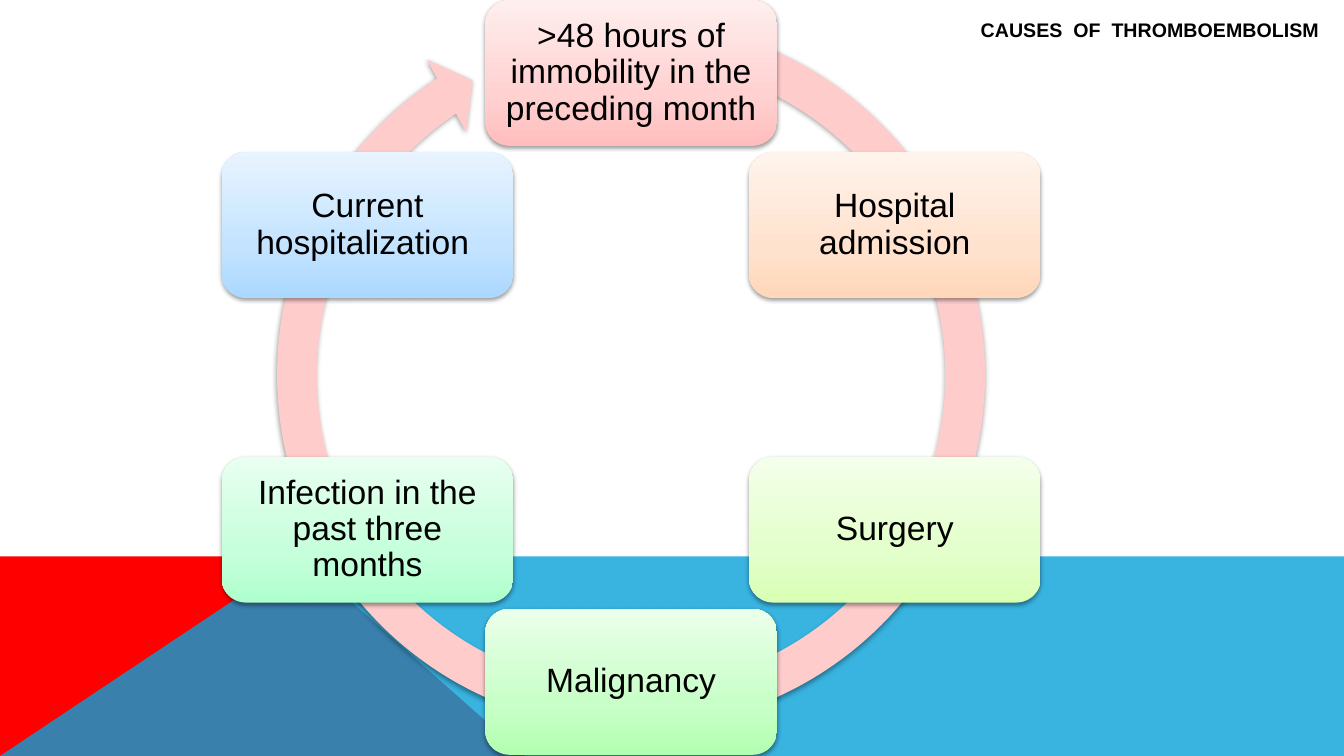
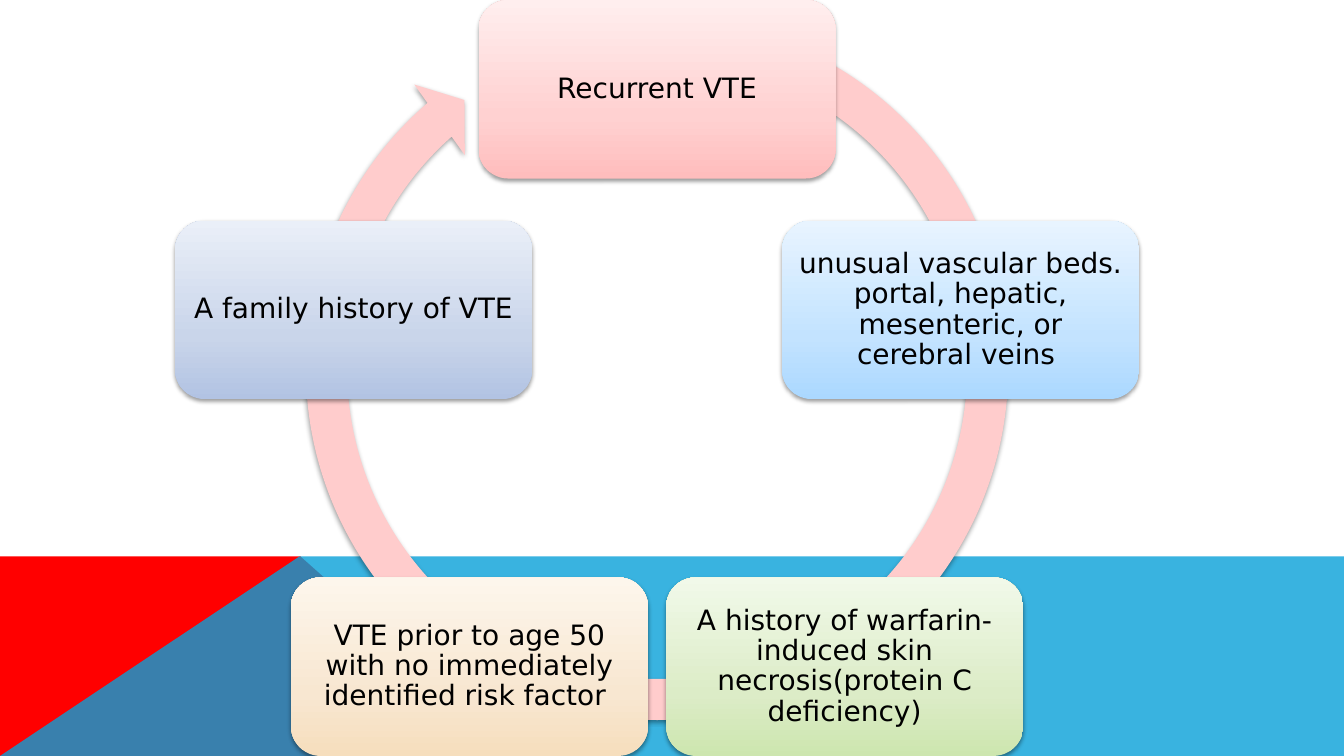
"""Builds two cycle slides on the causes and recurrence of thromboembolism."""
from copy import deepcopy
from math import cos, pi, sin

from lxml.etree import SubElement
from pptx import Presentation
from pptx.dml.color import RGBColor
from pptx.enum.shapes import MSO_SHAPE
from pptx.enum.text import MSO_ANCHOR, PP_ALIGN
from pptx.oxml.ns import qn
from pptx.util import Cm, Pt

SLIDE_W, SLIDE_H = 33.87, 19.05
BAND_TOP = 14.02

BLACK = RGBColor(0x00, 0x00, 0x00)
RED = RGBColor(0xFF, 0x00, 0x00)
BLUE = RGBColor(0x08, 0xA1, 0xD9)
PINK = RGBColor(0xFF, 0xCC, 0xCC)


def shades(*codes):
    """Return the bottom, middle and top colours of a card."""
    return [RGBColor.from_string(code) for code in codes]


ROSE = shades("FFBDBD", "FFD1D1", "FFEEEE")
PEACH = shades("FFD7B9", "FFE2CE", "FFF4EC")
LIME = shades("D9FFB5", "E3FFCB", "F4FFEB")
GREEN = shades("B2FFB1", "C8FFC8", "EAFFEA")
MINT = shades("AEFFCD", "C6FFDB", "E9FFF1")
SKY = shades("ABD8FF", "C3E3FF", "E8F4FF")
MOSS = shades("CDE6AF", "DCECC7", "F1F9E9")
SAND = shades("F6DEBD", "F8E7D1", "FDF6EC")
SLATE = shades("B2C3E3", "C9D5EA", "EAEFF8")

RISKS = [
    (">48 hours of immobility in the preceding month", ROSE),
    ("Hospital admission", PEACH),
    ("Surgery", LIME),
    ("Malignancy", GREEN),
    ("Infection in the past three months", MINT),
    ("Current hospitalization ", SKY),
]
RECURRENCE = [
    ("Recurrent VTE", ROSE),
    ("unusual vascular beds. portal, hepatic, mesenteric, or cerebral veins ", SKY),
    ("A history of warfarin-induced skin necrosis(protein C deficiency)", MOSS),
    ("VTE prior to age 50 with no immediately identified risk factor ", SAND),
    ("A family history of VTE", SLATE),
]


def write_text(shape, text, *, font, size, bold=False, inset=0.25, spacing=1.0):
    """Write centred black text into a shape."""
    frame = shape.text_frame
    frame.word_wrap = True
    frame.vertical_anchor = MSO_ANCHOR.MIDDLE
    frame.margin_left = frame.margin_right = Cm(inset)
    frame.margin_top = frame.margin_bottom = Cm(inset)
    paragraph = frame.paragraphs[0]
    paragraph.alignment = PP_ALIGN.CENTER
    paragraph.line_spacing = spacing
    run = paragraph.add_run()
    run.text = text
    run.font.name = font
    run.font.size = Pt(size)
    run.font.bold = bold
    run.font.color.rgb = BLACK


def cast_shadow(shape):
    """Give a shape a soft shadow that falls straight down."""
    shape.shadow.inherit = False
    effects = shape._element.spPr.find(qn("a:effectLst"))
    shadow = SubElement(effects, qn("a:outerShdw"), blurRad=str(Pt(3.1)),
                        dist=str(Pt(1.6)), dir="5400000", rotWithShape="0")
    black = SubElement(shadow, qn("a:srgbClr"), val="000000")
    SubElement(black, qn("a:alpha"), val="38000")


def fill_gradient(shape, colours):
    """Fill a shape with three colours running from bottom to top."""
    shape.fill.gradient()
    shape.fill.gradient_angle = 90
    first = shape._element.spPr.find(".//" + qn("a:gs"))
    first.addnext(deepcopy(first))
    for stop, position, colour in zip(shape.fill.gradient_stops, (0, 0.35, 1), colours):
        stop.position = position
        stop.color.rgb = colour


def add_band(slide, colour, points):
    """Draw one flat band from corner points in centimetres."""
    start, *rest = [(Cm(x), Cm(y)) for x, y in points]
    builder = slide.shapes.build_freeform(*start)
    builder.add_line_segments(rest)
    band = builder.convert_to_shape()
    band.fill.solid()
    band.fill.fore_color.rgb = colour
    band.line.fill.background()
    band.shadow.inherit = False
    return band


def add_backdrop(slide):
    """Draw the red and translucent blue bands at the foot of a slide."""
    add_band(slide, RED, [(0, SLIDE_H), (0, BAND_TOP), (7.57, BAND_TOP), (13.23, SLIDE_H)])
    blue_band = add_band(slide, BLUE, [(0, SLIDE_H), (7.55, BAND_TOP),
                                       (SLIDE_W, BAND_TOP), (SLIDE_W, SLIDE_H)])
    colour = blue_band._element.spPr.find(".//" + qn("a:srgbClr"))
    SubElement(colour, qn("a:alpha"), val="80000")


def add_title(slide, text, left, top, width, height):
    """Place the slide title in the given box."""
    title = slide.shapes.add_textbox(Cm(left), Cm(top), Cm(width), Cm(height))
    write_text(title, text, font="Arial", size=14, bold=True)


def add_arrow(slide, center_x, center_y, size, bends):
    """Draw the circular arrow that runs behind the cards."""
    arrow = slide.shapes.add_shape(
        MSO_SHAPE.CIRCULAR_ARROW, Cm(center_x - size / 2), Cm(center_y - size / 2),
        Cm(size), Cm(size))
    for index, bend in enumerate(bends):
        arrow.adjustments[index] = bend
    arrow.fill.solid()
    arrow.fill.fore_color.rgb = PINK
    arrow.line.fill.background()
    cast_shadow(arrow)


def add_cycle(slide, causes, left, top, width, height, *, card_width, arrow_size,
              arrow_rise, bends, **text_format):
    """Spread cards evenly clockwise round a ring that fills the given box."""
    card_height = card_width / 2
    angles = [2 * pi * index / len(causes) for index in range(len(causes))]
    radius = (height - card_height) / (1 - min(map(cos, angles)))
    center_x = left + width / 2
    center_y = top + card_height / 2 + radius
    add_arrow(slide, center_x, top + height / 2 - arrow_rise, arrow_size, bends)
    for (text, colours), angle in zip(causes, angles):
        card = slide.shapes.add_shape(
            MSO_SHAPE.ROUNDED_RECTANGLE,
            Cm(center_x + radius * sin(angle) - card_width / 2),
            Cm(center_y - radius * cos(angle) - card_height / 2),
            Cm(card_width), Cm(card_height))
        fill_gradient(card, colours)
        card.line.fill.background()
        cast_shadow(card)
        write_text(card, text, spacing=0.9, **text_format)


def main():
    """Build and save the presentation."""
    deck = Presentation()
    deck.slide_width, deck.slide_height = Cm(SLIDE_W), Cm(SLIDE_H)
    risk_slide, recurrence_slide = [
        deck.slides.add_slide(deck.slide_layouts[6]) for _ in range(2)]

    add_backdrop(risk_slide)
    add_title(risk_slide, "CAUSES  OF  THROMBOEMBOLISM", 24.13, 0, 9.7, 1.52)
    add_cycle(risk_slide, RISKS, 5.59, 0, 20.63, 19.02, card_width=7.35,
              arrow_size=18.92, arrow_rise=0.07, bends=(0.053, 3.126, 141.89, 171.5, 0.055),
              font="Arial", size=24, inset=0.25)

    add_backdrop(recurrence_slide)
    add_cycle(recurrence_slide, RECURRENCE, 4.42, 0, 24.28, SLIDE_H, card_width=9,
              arrow_size=18.85, arrow_rise=0.23, bends=(0.055, 3.307, 137.318, 174.128, 0.058),
              font="DejaVu Sans", size=20, inset=0.2)

    deck.save("out.pptx")


if __name__ == "__main__":
    main()
